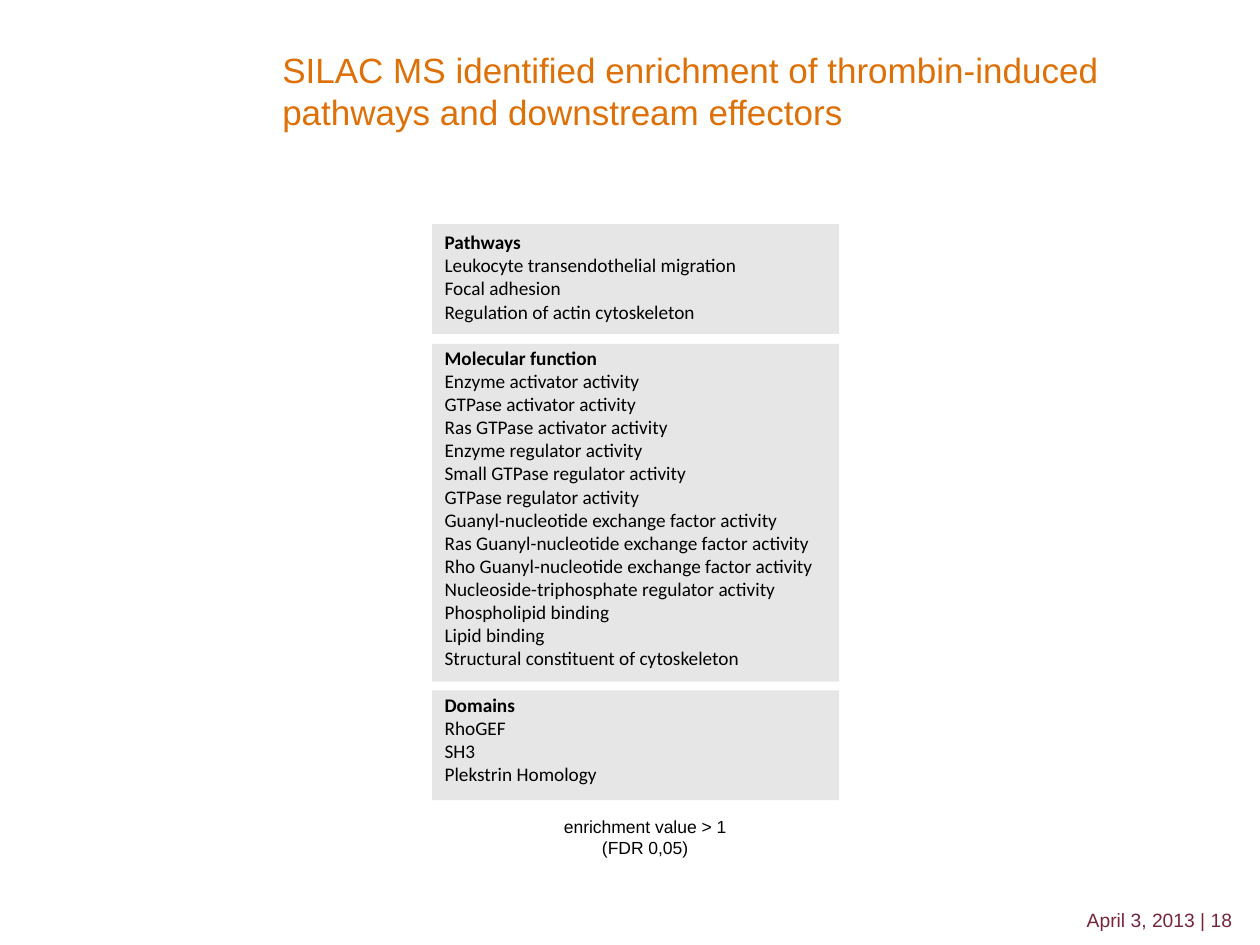
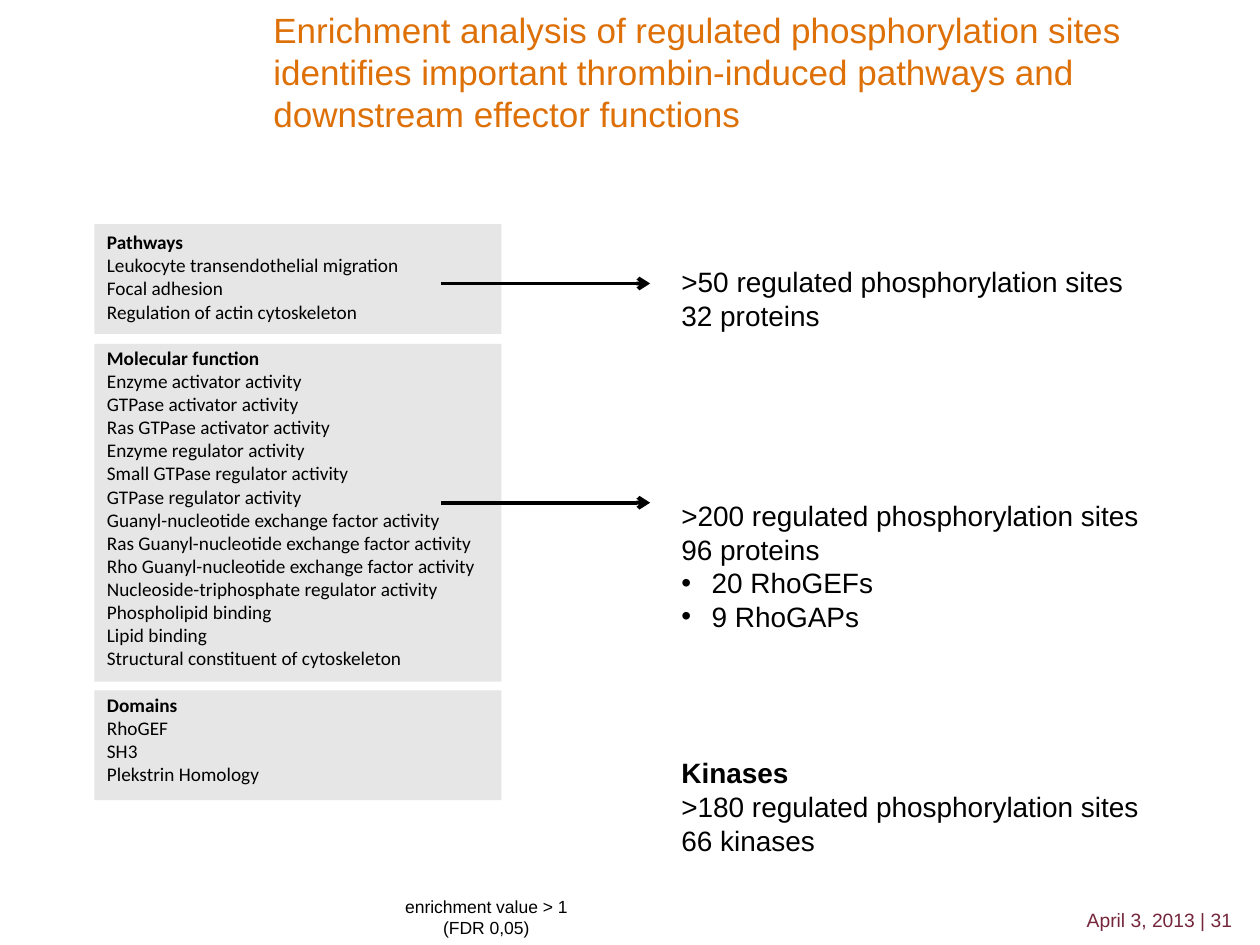
from dataclasses import dataclass

from lxml import etree
from pptx import Presentation
from pptx.dml.color import RGBColor
from pptx.enum.shapes import MSO_CONNECTOR, MSO_SHAPE
from pptx.enum.text import MSO_ANCHOR, MSO_AUTO_SIZE, PP_ALIGN
from pptx.oxml.ns import qn
from pptx.util import Inches, Pt

LEFT, CENTER, RIGHT = PP_ALIGN.LEFT, PP_ALIGN.CENTER, PP_ALIGN.RIGHT
TOP, MIDDLE = MSO_ANCHOR.TOP, MSO_ANCHOR.MIDDLE
GROW = MSO_AUTO_SIZE.SHAPE_TO_FIT_TEXT
RECTANGLE = MSO_SHAPE.RECTANGLE
STRAIGHT = MSO_CONNECTOR.STRAIGHT


@dataclass(frozen=True)
class Theme:
    """Colours, fonts and type sizes shared by the slides."""

    title_color: RGBColor = RGBColor(0xDE, 0x70, 0x08)
    footer_color: RGBColor = RGBColor(0x75, 0x26, 0x3B)
    text_color: RGBColor = RGBColor(0, 0, 0)
    panel_color: RGBColor = RGBColor(0xE6, 0xE6, 0xE6)
    font: str = "Arial"
    list_font: str = "Calibri"
    title_size: int = 20
    finding_size: int = 16
    list_size: int = 11
    footer_size: int = 11
    note_size: int = 10
    list_line: float = 13.2
    arrow_width: float = 2.25


@dataclass(frozen=True)
class Line:
    """One paragraph of text."""

    text: str
    bold: bool = False
    bullet: bool = False
    before: float = 0


ENRICHED_TERMS = {
    "Pathways": [
        "Leukocyte transendothelial migration",
        "Focal adhesion",
        "Regulation of actin cytoskeleton",
    ],
    "Molecular function": [
        "Enzyme activator activity",
        "GTPase activator activity",
        "Ras GTPase activator activity",
        "Enzyme regulator activity",
        "Small GTPase regulator activity",
        "GTPase regulator activity",
        "Guanyl-nucleotide exchange factor activity",
        "Ras Guanyl-nucleotide exchange factor activity",
        "Rho Guanyl-nucleotide exchange factor activity",
        "Nucleoside-triphosphate regulator activity",
        "Phospholipid binding",
        "Lipid binding",
        "Structural constituent of cytoskeleton",
    ],
    "Domains": ["RhoGEF", "SH3", "Plekstrin Homology"],
}
PANEL_ROWS = [(1.78, 0.87), (2.73, 2.68), (5.48, 0.87)]
PANEL_WIDTH = 3.23


class Deck:
    """Builds slides in one style."""

    def __init__(self, theme):
        self.theme = theme
        self.presentation = Presentation()
        self.presentation.slide_width = Inches(10)
        self.presentation.slide_height = Inches(7.5)
        self.slide = None

    def add_slide(self, number):
        """Start a slide with its dated footer."""
        self.slide = self.presentation.slides.add_slide(self.presentation.slide_layouts[6])
        self.add_text((7.55, 7.16, 2.33, 0.29), [Line(f"April 3, 2013 | {number}")],
                      self.theme.footer_size, color=self.theme.footer_color, align=RIGHT,
                      wrap=True)

    def add_text(self, box, lines, size, font=None, color=None, align=LEFT, anchor=TOP,
                 wrap=False, shapes=None):
        """Add a text box with one paragraph per line."""
        shapes = self.slide.shapes if shapes is None else shapes
        frame = shapes.add_textbox(*map(Inches, box)).text_frame
        frame.word_wrap = wrap
        frame.vertical_anchor = anchor
        if not wrap:
            frame.auto_size = GROW
        for index, line in enumerate(lines):
            paragraph = frame.add_paragraph() if index else frame.paragraphs[0]
            paragraph.alignment = align
            if line.before:
                paragraph.space_before = Pt(line.before)
            if line.bullet:
                self.add_bullet(paragraph)
            run = paragraph.add_run()
            run.text = line.text
            run.font.name = font or self.theme.font
            run.font.size = Pt(size)
            run.font.bold = line.bold
            run.font.color.rgb = color or self.theme.text_color
        return frame

    def add_bullet(self, paragraph):
        """Give a paragraph a round bullet and hanging indent."""
        properties = paragraph._p.get_or_add_pPr()
        indent = Inches(0.24)
        properties.set("marL", str(indent))
        properties.set("indent", str(-indent))
        etree.SubElement(properties, qn("a:buFont"), typeface="Arial")
        etree.SubElement(properties, qn("a:buChar"), char="•")

    def add_title(self, box, text):
        """Add the slide title."""
        frame = self.add_text(box, [Line(text)], self.theme.title_size,
                              color=self.theme.title_color, anchor=MIDDLE, wrap=True)
        frame.margin_left = 0

    def add_note(self, left, top):
        """Add the note on the enrichment threshold."""
        self.add_text((left, top, 1.5, 0.44), [Line("enrichment value > 1"), Line("(FDR 0,05)")],
                      self.theme.note_size, align=CENTER)

    def add_term_panels(self, left):
        """Add the grouped panels listing the enriched terms."""
        shapes = self.slide.shapes.add_group_shape().shapes
        for top, height in PANEL_ROWS:
            box = (left, top, PANEL_WIDTH, height)
            panel = shapes.add_shape(RECTANGLE, *map(Inches, box))
            panel.shadow.inherit = False
            panel.fill.solid()
            panel.fill.fore_color.rgb = self.theme.panel_color
            panel.line.fill.background()
        lines = []
        for heading, terms in ENRICHED_TERMS.items():
            gap = self.theme.list_line if lines else 0
            lines.append(Line(heading, bold=True, before=gap))
            lines.extend(map(Line, terms))
        self.add_text((left, PANEL_ROWS[0][0], 3.15, 4.91), lines, self.theme.list_size,
                      font=self.theme.list_font, shapes=shapes)

    def add_finding(self, top, width, height, lines):
        """Add a finding in the right column."""
        self.add_text((5.31, top, width, height), lines, self.theme.finding_size)

    def add_arrow(self, top):
        """Add an arrow from a panel to its finding."""
        arrow = self.slide.shapes.add_connector(STRAIGHT, Inches(3.5), Inches(top),
                                                Inches(5.16), Inches(top))
        arrow.line.color.rgb = self.theme.text_color
        arrow.line.width = Pt(self.theme.arrow_width)
        etree.SubElement(arrow.line._get_or_add_ln(), qn("a:tailEnd"), type="arrow")
        etree.SubElement(arrow._element.spPr, qn("a:effectLst"))


def build_enrichment_slide(deck):
    """Show the enriched terms alone."""
    deck.add_slide(18)
    deck.add_title((2.24, 0.28, 6.85, 0.87),
                   "SILAC MS identified enrichment of thrombin-induced pathways "
                   "and downstream effectors")
    deck.add_term_panels(3.43)
    deck.add_note(4.37, 6.43)


def build_findings_slide(deck):
    """Link the enriched terms to the regulated sites."""
    deck.add_slide(31)
    deck.add_title((2.17, 0.13, 6.97, 0.87),
                   "Enrichment analysis of regulated phosphorylation sites identifies "
                   "important thrombin-induced pathways and downstream effector functions")
    deck.add_term_panels(0.75)
    deck.add_finding(2.05, 3.75, 0.91,
                     [Line(">50 regulated phosphorylation sites"), Line("32 proteins")])
    deck.add_finding(3.91, 3.87, 1.18,
                     [Line(">200 regulated phosphorylation sites"), Line("96 proteins"),
                      Line("20 RhoGEFs", bullet=True), Line("9 RhoGAPs", bullet=True)])
    deck.add_finding(5.95, 3.87, 0.91,
                     [Line("Kinases", bold=True),
                      Line(">180 regulated phosphorylation sites"), Line("66 kinases")])
    for top in (2.25, 3.99):
        deck.add_arrow(top)
    deck.add_note(3.11, 7.06)


def main():
    """Build and save both slides."""
    deck = Deck(Theme())
    build_enrichment_slide(deck)
    build_findings_slide(deck)
    deck.presentation.save("out.pptx")


if __name__ == "__main__":
    main()
